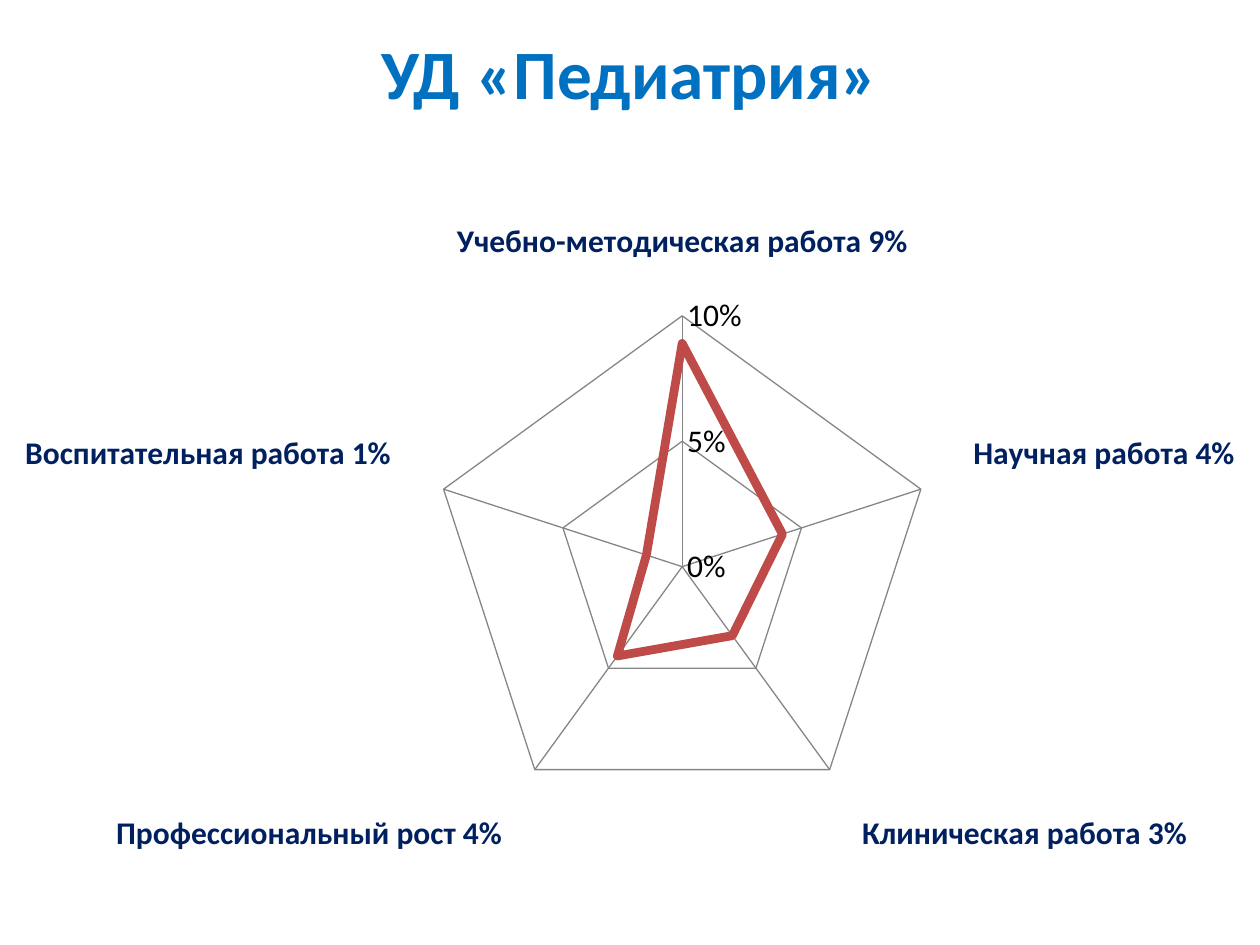
from dataclasses import dataclass

from pptx import Presentation
from pptx import util as u
from pptx.chart.data import CategoryChartData
from pptx.dml.color import RGBColor
from pptx.enum import chart as ch, text
from pptx.oxml.ns import qn


@dataclass
class Theme:
    font: str = "Calibri"
    title: str = "0070C0"
    category: str = "002060"
    value: str = "000000"
    grid: str = "868686"
    series: str = "BE4B48"
    title_size: float = 39.6
    label_size: float = 18
    series_width: float = 5
    grid_width: float = 0.75


def px(n):
    return u.Emu(round(n * 914400 / 126))


def write(tf, words, size, color, font, bold=False, align=text.PP_ALIGN.CENTER):
    p = tf.paragraphs[0]
    p.alignment = align
    r = p.add_run()
    r.text = words
    r.font.name = font
    r.font.size = u.Pt(size)
    r.font.bold = bold
    r.font.color.rgb = RGBColor.from_string(color)


theme = Theme()
prs = Presentation()
prs.slide_width, prs.slide_height = px(1260), px(945)
slide = prs.slides.add_slide(prs.slide_layouts[5])

sp = slide.shapes.title
sp.left, sp.top, sp.width, sp.height = px(63), px(38), px(1134), px(68)
tf = sp.text_frame
tf.word_wrap = True
tf.auto_size = text.MSO_AUTO_SIZE.NONE
tf.vertical_anchor = text.MSO_ANCHOR.MIDDLE
write(tf, "УД «Педиатрия»", theme.title_size, theme.title, theme.font, bold=True)

shares = {
    "Учебно-методическая работа 9%": 0.089,
    "Научная работа 4%": 0.042,
    "Клиническая работа 3%": 0.034,
    "Профессиональный рост 4%": 0.044,
    "Воспитательная работа 1%": 0.015,
}
data = CategoryChartData(number_format="0%")
data.categories = list(shares)
data.add_series("Series 1", list(shares.values()))

chart = slide.shapes.add_chart(
    ch.XL_CHART_TYPE.RADAR, px(0), px(106), px(1260), px(863), data
).chart
chart.has_legend = False
chart.has_title = False
chart.font.name = theme.font
chart.font.size = u.Pt(theme.label_size)

for axis, color, bold in (
    (chart.category_axis, theme.category, True),
    (chart.value_axis, theme.value, False),
):
    axis.has_major_gridlines = True
    axis.major_tick_mark = ch.XL_TICK_MARK.NONE
    axis.minor_tick_mark = ch.XL_TICK_MARK.NONE
    font = axis.tick_labels.font
    font.name = theme.font
    font.size = u.Pt(theme.label_size)
    font.bold = bold
    font.color.rgb = RGBColor.from_string(color)
    for line in (axis.format.line, axis.major_gridlines.format.line):
        line.color.rgb = RGBColor.from_string(theme.grid)
        line.width = u.Pt(theme.grid_width)

axis = chart.value_axis
axis.minimum_scale, axis.maximum_scale, axis.major_unit = 0, 0.1, 0.05
axis.tick_labels.number_format = "0%"
axis.tick_labels.number_format_is_linked = False

plot = chart.plots[0]
plot.vary_by_categories = False
series = plot.series[0]
series.smooth = False
series.marker.style = ch.XL_MARKER_STYLE.NONE
series.format.line.color.rgb = RGBColor.from_string(theme.series)
series.format.line.width = u.Pt(theme.series_width)

area = chart.element.find(".//" + qn("c:plotArea"))
for layout in area.findall(qn("c:layout")):
    area.remove(layout)

prs.save("out.pptx")
